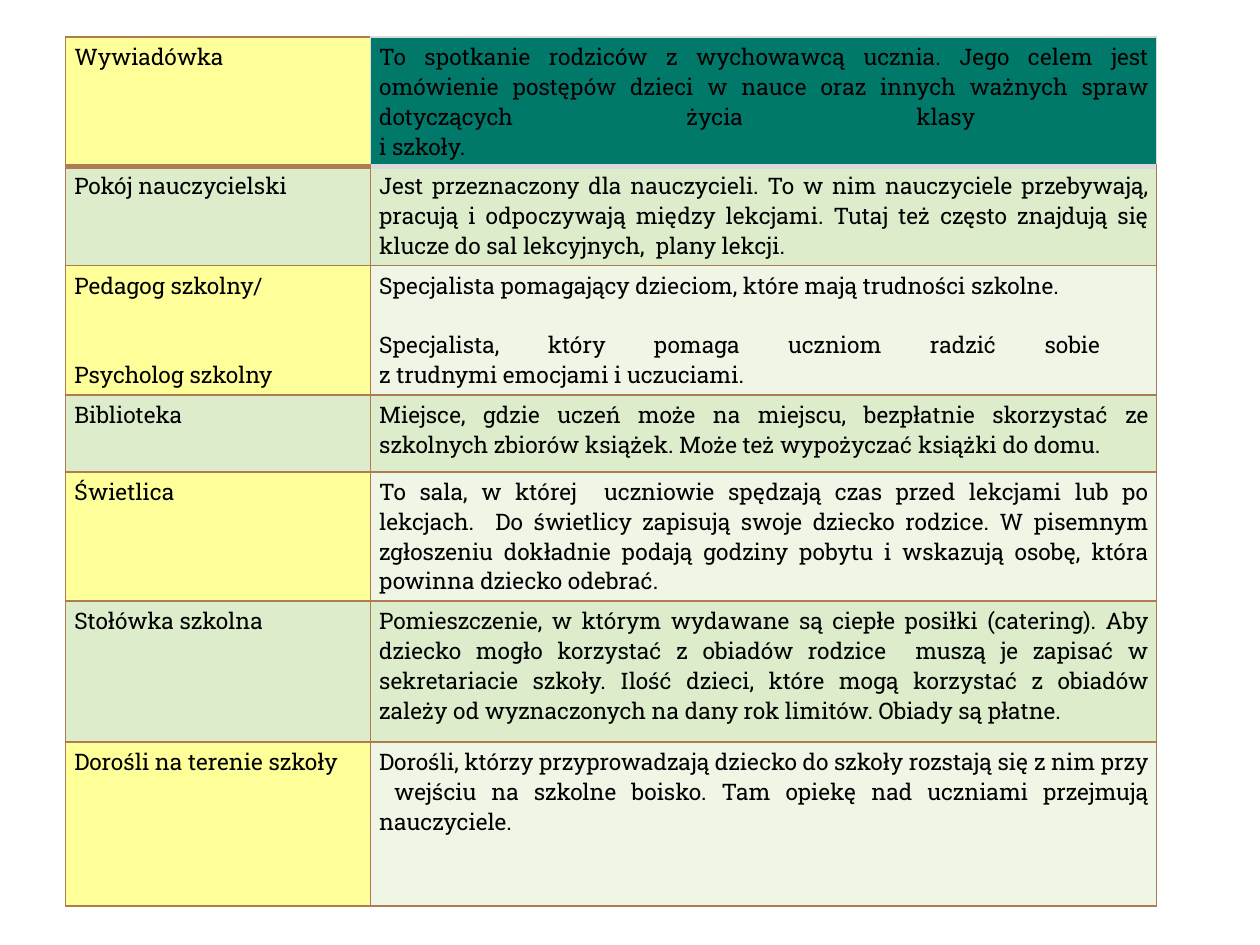
from copy import deepcopy

from lxml import etree
from pptx import Presentation
from pptx import util as u
from pptx.dml.color import RGBColor
from pptx.enum import text
from pptx.oxml import ns

BROWN, GREY = "AF7B51", "D9D9D9"
YELLOW, GREEN, PALE, TEAL = "FFFF99", "DDECCA", "EFF6E6", "00796B"
LINE = 17

ROWS = [
    (0.78, ["Wywiadówka"],
     ["To spotkanie rodziców z wychowawcą ucznia. Jego celem jest omówienie postępów dzieci "
      "w nauce oraz innych ważnych spraw dotyczących życia klasy \ni szkoły."]),
    (0.78, ["Pokój nauczycielski"],
     ["Jest przeznaczony dla nauczycieli. To w nim nauczyciele przebywają, pracują i "
      "odpoczywają między lekcjami. Tutaj też często znajdują się klucze do sal "
      "lekcyjnych,  plany lekcji."]),
    (0.95, ["Pedagog szkolny/", "Psycholog szkolny"],
     ["Specjalista pomagający dzieciom, które mają trudności szkolne.",
      "Specjalista, który pomaga uczniom radzić sobie \nz trudnymi emocjami i uczuciami."]),
    (0.61, ["Biblioteka"],
     ["Miejsce, gdzie uczeń może na miejscu, bezpłatnie skorzystać ze szkolnych zbiorów "
      "książek. Może też wypożyczać książki do domu."]),
    (0.95, ["Świetlica"],
     ["To sala, w której  uczniowie spędzają czas przed lekcjami lub po lekcjach.  Do "
      "świetlicy zapisują swoje dziecko rodzice. W pisemnym zgłoszeniu dokładnie podają "
      "godziny pobytu i wskazują osobę, która powinna dziecko odebrać."]),
    (1.12, ["Stołówka szkolna"],
     ["Pomieszczenie, w którym wydawane są ciepłe posiłki (catering). Aby dziecko mogło "
      "korzystać z obiadów rodzice  muszą je zapisać w sekretariacie szkoły. Ilość dzieci, "
      "które mogą korzystać z obiadów zależy od wyznaczonych na dany rok limitów. Obiady "
      "są płatne."]),
    (1.3, ["Dorośli na terenie szkoły"],
     ["Dorośli, którzy przyprowadzają dziecko do szkoły rozstają się z nim przy  wejściu na "
      "szkolne boisko. Tam opiekę nad uczniami przejmują nauczyciele."]),
]


def tint(code):
    """Turn a hex string into a colour."""
    return RGBColor.from_string(code)


def write(frame, lines, size=13, font="Roboto Slab", color="000000", align=None, gap=0):
    """Write paragraphs into a text frame with one format."""
    for i, line in enumerate(lines):
        para = frame.add_paragraph() if i else frame.paragraphs[0]
        para.text = line
        para.alignment = align
        if i:
            para.space_before = u.Pt(gap)
        for run in para.runs:
            run.font.size, run.font.name = u.Pt(size), font
            run.font.color.rgb = tint(color)
        for brk in para._p.findall(ns.qn("a:br")):
            brk.append(deepcopy(para.runs[0].font._element))


def edge(cell, **sides):
    """Draw the four borders of a cell from (colour, points) pairs."""
    props = cell._tc.get_or_add_tcPr()
    for i, side in enumerate("LRTB"):
        color, width = sides.get(side, (BROWN, 1))
        line = etree.Element(ns.qn("a:ln" + side), w=str(u.Pt(width)))
        fill = etree.SubElement(line, ns.qn("a:solidFill"))
        etree.SubElement(fill, ns.qn("a:srgbClr"), val=color)
        props.insert(i, line)


class Deck:
    """Hold the style and the current slide."""

    def __init__(self, wide=10, high=7.5):
        """Open a deck with one blank slide."""
        self.show = Presentation()
        self.show.slide_width, self.show.slide_height = u.Inches(wide), u.Inches(high)
        self.page = self.show.slides.add_slide(self.show.slide_layouts[6])

    def table(self, left, top, cols, rows):
        """Add a plain table whose columns are shares of the slide width."""
        wide, high = self.show.slide_width, self.show.slide_height
        sizes = [int(wide * c) for c in cols]
        tall = [u.Inches(r) for r in rows]
        grid = self.page.shapes.add_table(
            len(rows), len(cols), int(wide * left), int(high * top), sum(sizes), sum(tall)).table
        grid.first_row = grid.horz_banding = False
        for col, size in zip(grid.columns, sizes):
            col.width = size
        for row, size in zip(grid.rows, tall):
            row.height = size
        return grid

    def cell(self, cell, lines, fill, sides, **style):
        """Fill, frame and write one cell."""
        cell.margin_left = cell.margin_right = u.Inches(0.07)
        cell.margin_top = cell.margin_bottom = u.Inches(0.04)
        cell.fill.solid()
        cell.fill.fore_color.rgb = tint(fill)
        edge(cell, **sides)
        write(cell.text_frame, lines, **style)


def main():
    """Build the school glossary slide."""
    deck = Deck()
    grid = deck.table(0.052, 0.039, (0.242, 0.624), [row[0] for row in ROWS])
    thin, thick = (GREY, 1), (GREY, 3)
    rims = {
        (0, 0): dict(R=thin, B=(BROWN, 3)),
        (0, 1): dict(L=thin, R=thin, T=thin, B=thick),
        (1, 1): dict(T=thick),
    }
    for i, (_, term, note) in enumerate(ROWS):
        left, right = (GREEN, GREEN) if i % 2 else (YELLOW, PALE if i else TEAL)
        deck.cell(grid.cell(i, 0), term, left, rims.get((i, 0), {}), gap=2 * LINE)
        deck.cell(grid.cell(i, 1), note, right, rims.get((i, 1), {}),
                  align=text.PP_ALIGN.JUSTIFY, gap=LINE)
    deck.show.save("out.pptx")


if __name__ == "__main__":
    main()
